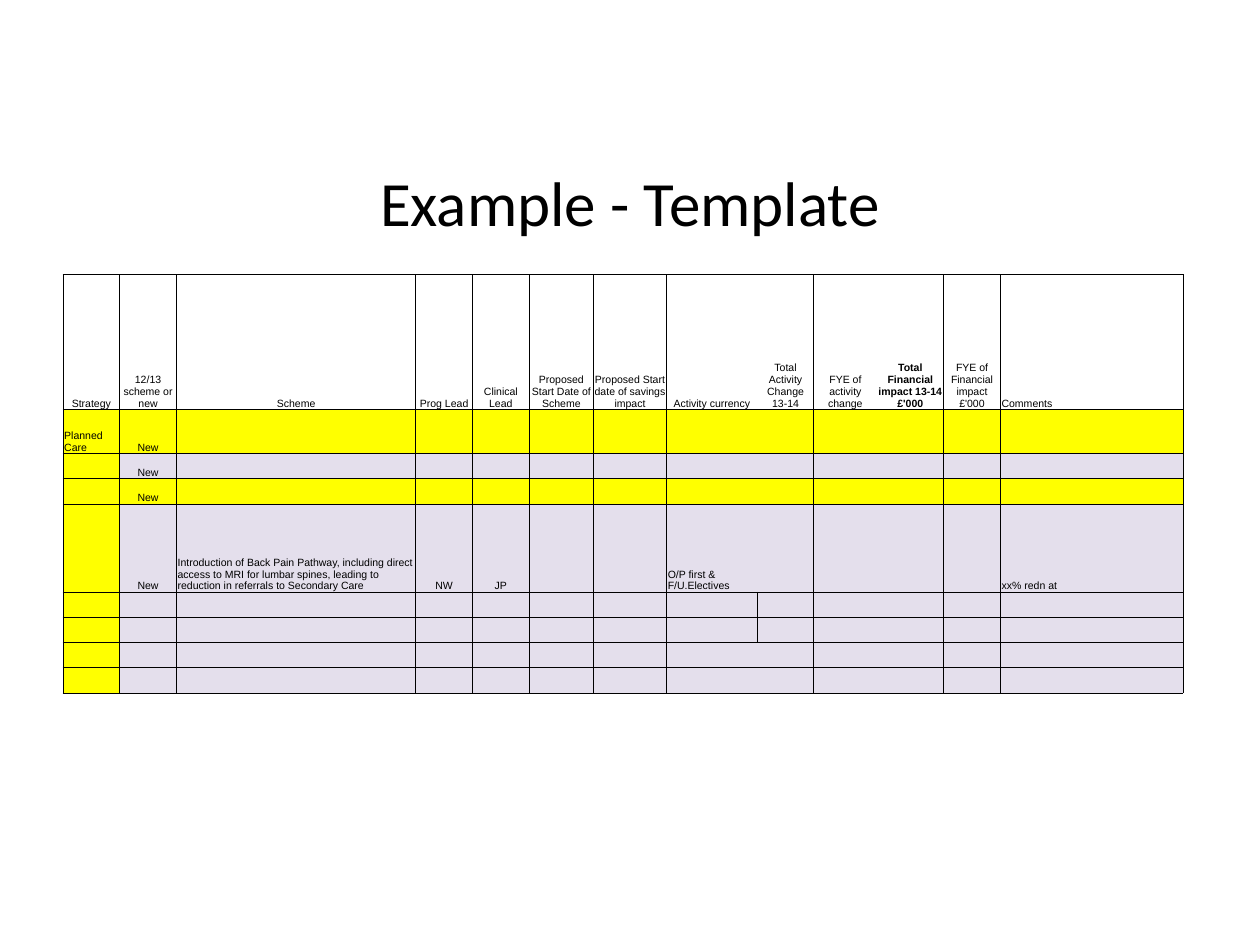
"""Build the example scheme template slide."""
import pptx
import pptx.dml.color
import pptx.enum.text
import pptx.oxml.ns
import pptx.util
from lxml import etree

Inches = pptx.util.Inches
Pt = pptx.util.Pt
RGBColor = pptx.dml.color.RGBColor
Align = pptx.enum.text.PP_ALIGN
Anchor = pptx.enum.text.MSO_ANCHOR

BLACK = RGBColor(0x00, 0x00, 0x00)
YELLOW = RGBColor(0xFF, 0xFF, 0x00)
LAVENDER = RGBColor(0xE4, 0xDF, 0xEC)

COLUMN_WIDTHS = [0.45, 0.45, 1.9, 0.45, 0.45, 0.51, 0.58, 0.72, 0.45, 0.5, 0.53, 0.45, 1.45, 1.59]
ROW_HEIGHTS = [0.2, 0.87, 0.35, 0.2, 0.2, 0.7] + [0.2] * 9
HEADER_ROW = 1
BODY_ROWS = range(2, 10)
YELLOW_ROWS = (2, 4)
SPLIT_ROWS = (6, 7)
GRID_ROWS = 10
GRID_COLUMNS = 13

HEADINGS = [
    "Strategy", "12/13 scheme or new", "Scheme", "Prog Lead", "Clinical Lead",
    "Proposed Start Date of Scheme", "Proposed Start date of savings impact",
    "Activity currency", "Total Activity Change 13-14", "FYE of activity change",
    "Total Financial impact 13-14 £'000", "FYE of Financial impact £'000", "Comments",
]
BOLD_HEADING = (HEADER_ROW, 10)
ENTRIES = {(HEADER_ROW, column): heading for column, heading in enumerate(HEADINGS)}
ENTRIES.update({(row, 1): "New" for row in range(2, 6)})
ENTRIES.update({
    (2, 0): "Planned Care",
    (5, 2): "Introduction of Back Pain Pathway, including direct access to MRI for "
            "lumbar spines, leading to reduction in referrals to Secondary Care",
    (5, 3): "NW",
    (5, 4): "JP",
    (5, 7): "O/P first & F/U.Electives",
    (5, 12): "xx% redn at",
})
LEFT_ALIGNED = {(HEADER_ROW, 12), (2, 0), (5, 2), (5, 7), (5, 12)}


def rule_before(row, column):
    """Tell whether a vertical rule stands at the left of a cell."""
    joined = column == 10 or (column == 8 and row not in SPLIT_ROWS)
    return row < GRID_ROWS and column <= GRID_COLUMNS and not joined


def rule_above(row, column):
    """Tell whether a horizontal rule runs along the top of a cell."""
    return row <= GRID_ROWS and column < GRID_COLUMNS and row != HEADER_ROW


def cell_fill(row, column):
    """Return the fill colour of a cell, or None for a clear one."""
    if row not in BODY_ROWS or column >= GRID_COLUMNS:
        return None
    return YELLOW if column == 0 or row in YELLOW_ROWS else LAVENDER


class SlideBuilder:
    """Hold the style and the current slide."""

    def __init__(self, slide):
        self.slide = slide
        self.title_font, self.title_size = "Calibri", Pt(36)
        self.table_font, self.table_size = "Arial", Pt(6)
        self.rule_width = Pt(0.5)

    def style_run(self, run, font, size, bold=False):
        """Apply a font, a size and a weight to a run."""
        run.font.name, run.font.size, run.font.bold = font, size, bold
        run.font.color.rgb = BLACK

    def title(self, text, left, top, width, height):
        """Add the centred slide title."""
        box = self.slide.shapes.add_textbox(Inches(left), Inches(top), Inches(width), Inches(height))
        frame = box.text_frame
        frame.word_wrap = True
        frame.vertical_anchor = Anchor.MIDDLE
        frame.text = text
        frame.paragraphs[0].alignment = Align.CENTER
        self.style_run(frame.paragraphs[0].runs[0], self.title_font, self.title_size)

    def borders(self, cell, row, column):
        """Draw the rules around a cell."""
        sides = {
            "a:lnL": rule_before(row, column),
            "a:lnR": rule_before(row, column + 1),
            "a:lnT": rule_above(row, column),
            "a:lnB": rule_above(row + 1, column),
        }
        qn = pptx.oxml.ns.qn
        properties = cell._tc.get_or_add_tcPr()
        for side, ruled in sides.items():
            line = etree.SubElement(properties, qn(side), w=str(self.rule_width))
            paint = etree.SubElement(line, qn("a:solidFill" if ruled else "a:noFill"))
            if ruled:
                etree.SubElement(paint, qn("a:srgbClr"), val=str(BLACK))

    def cell(self, cell, row, column):
        """Set the rules, fill and text of a cell."""
        self.borders(cell, row, column)
        colour = cell_fill(row, column)
        if colour is None:
            cell.fill.background()
        else:
            cell.fill.solid()
            cell.fill.fore_color.rgb = colour
        cell.margin_left = cell.margin_right = cell.margin_top = Inches(0.01)
        cell.margin_bottom = 0
        cell.vertical_anchor = Anchor.BOTTOM
        place = (row, column)
        paragraph = cell.text_frame.paragraphs[0]
        if place in ENTRIES:
            paragraph.text = ENTRIES[place]
            paragraph.alignment = Align.LEFT if place in LEFT_ALIGNED else Align.CENTER
            self.style_run(paragraph.runs[0], self.table_font, self.table_size, place == BOLD_HEADING)
        else:
            paragraph._p.get_or_add_endParaRPr().set("sz", str(int(self.table_size.pt * 100)))

    def table(self, left, top):
        """Add the scheme table."""
        frame = self.slide.shapes.add_table(
            len(ROW_HEIGHTS), len(COLUMN_WIDTHS), Inches(left), Inches(top),
            Inches(sum(COLUMN_WIDTHS)), Inches(sum(ROW_HEIGHTS)))
        schemes = frame.table
        schemes.first_row = schemes.horz_banding = False
        for column, width in zip(schemes.columns, COLUMN_WIDTHS):
            column.width = Inches(width)
        for row, height in enumerate(ROW_HEIGHTS):
            schemes.rows[row].height = Inches(height)
            for column in range(len(COLUMN_WIDTHS)):
                self.cell(schemes.cell(row, column), row, column)


def main():
    """Build and save the presentation."""
    presentation = pptx.Presentation()
    presentation.slide_width, presentation.slide_height = Inches(10), Inches(7.5)
    builder = SlideBuilder(presentation.slides.add_slide(presentation.slide_layouts[6]))
    builder.title("Example - Template", 0.5, 0.97, 9, 1.25)
    builder.table(0.5, 2.18)
    presentation.save("out.pptx")


if __name__ == "__main__":
    main()
